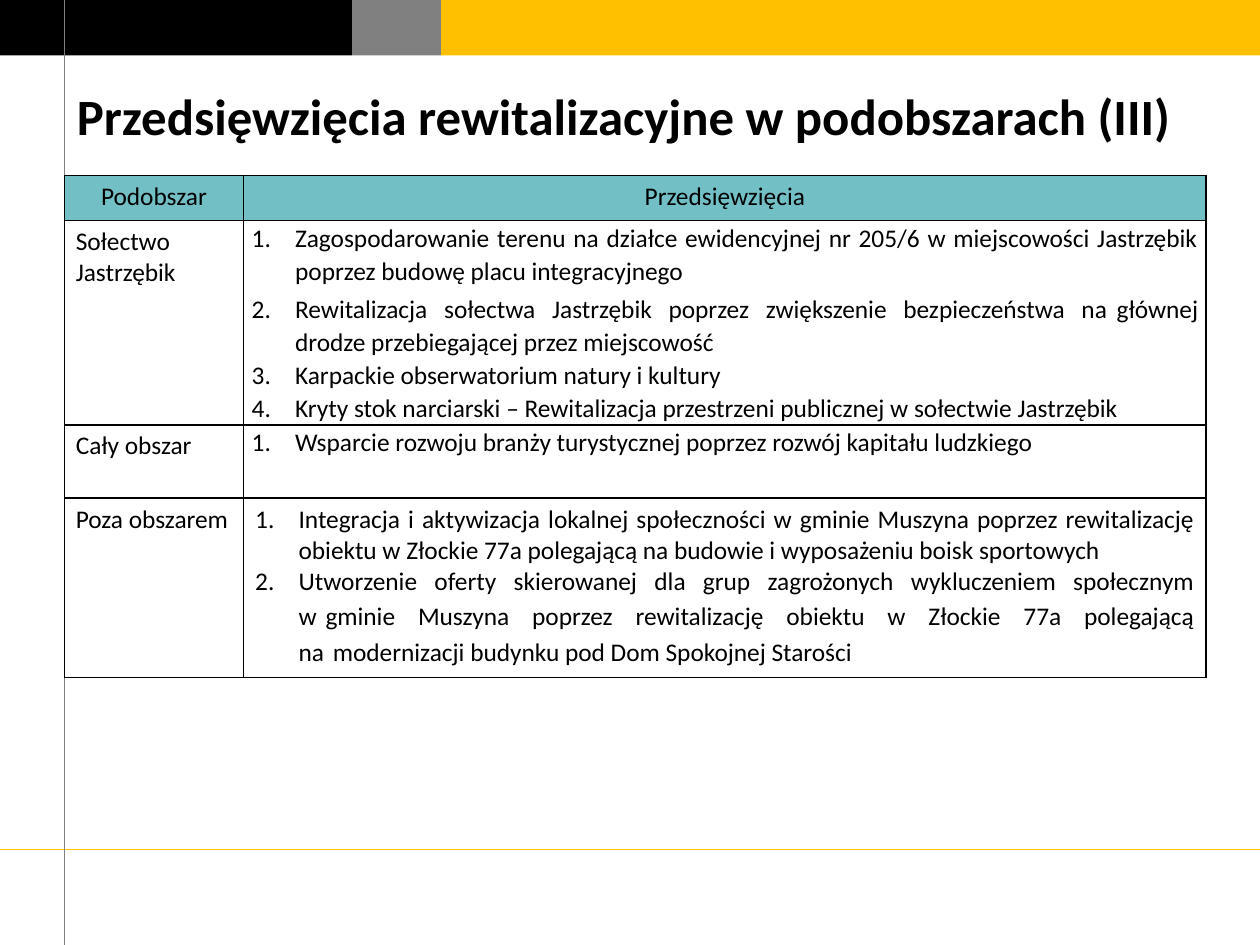
"""Build the slide on revitalisation projects by subarea."""
from dataclasses import dataclass

from lxml.etree import SubElement
from pptx import Presentation
from pptx.dml.color import RGBColor
from pptx.enum.shapes import MSO_CONNECTOR, MSO_SHAPE
from pptx.enum.text import MSO_ANCHOR, PP_ALIGN
from pptx.oxml.ns import qn
from pptx.util import Cm, Inches, Pt


@dataclass(frozen=True)
class Theme:
    black: str = "000000"
    gray: str = "808080"
    amber: str = "FFC000"
    teal: str = "72BFC5"
    text_font: str = "Calibri"
    space_font: str = "Arial"
    title_size: int = 32
    body_size: int = 16
    space_size: int = 20
    hairline: float = 0.75
    border: float = 1
    grid: float = 0.1


@dataclass(frozen=True)
class Project:
    subarea: str
    items: tuple
    tight: bool = False
    anchor: MSO_ANCHOR = MSO_ANCHOR.TOP


HARD_SPACE = chr(160)
COLUMNS, ROWS = 110.24, 82.68
MARGIN, BAND = 5.63, 4.86
HEADINGS = ("Podobszar", "Przedsięwzięcia")
PROJECTS = (
    Project("Sołectwo Jastrzębik", (
        ("Zagospodarowanie terenu na działce ewidencyjnej nr 205/6 w miejscowości "
         "Jastrzębik poprzez budowę placu integracyjnego",),
        ("Rewitalizacja sołectwa Jastrzębik poprzez zwiększenie bezpieczeństwa na",
         "głównej drodze przebiegającej przez miejscowość"),
        ("Karpackie obserwatorium natury i kultury",),
        ("Kryty stok narciarski – Rewitalizacja przestrzeni publicznej "
         "w sołectwie Jastrzębik ",),
    ), True, MSO_ANCHOR.MIDDLE),
    Project("Cały obszar", (
        ("Wsparcie rozwoju branży turystycznej poprzez rozwój kapitału ludzkiego",),
    ), True),
    Project("Poza obszarem", (
        ("Integracja i aktywizacja lokalnej społeczności w gminie Muszyna poprzez "
         "rewitalizację obiektu w Złockie 77a polegającą na budowie i wyposażeniu "
         "boisk sportowych ",),
        ("Utworzenie oferty skierowanej dla grup zagrożonych wykluczeniem społecznym w",
         "gminie Muszyna poprzez rewitalizację obiektu w Złockie 77a polegającą na",
         "modernizacji budynku pod Dom Spokojnej Starości"),
    )),
)


class SlideBuilder:
    def __init__(self, slide, theme):
        self.slide = slide
        self.theme = theme

    def lengths(self, *cells):
        return [Inches(cell * self.theme.grid) for cell in cells]

    def band(self, left, right, color):
        box = self.slide.shapes.add_shape(
            MSO_SHAPE.RECTANGLE, *self.lengths(left, 0, right - left, BAND))
        box.shadow.inherit = False
        box.fill.solid()
        box.fill.fore_color.rgb = RGBColor.from_string(color)
        box.line.fill.background()

    def rule(self, start, end, color):
        line = self.slide.shapes.add_connector(
            MSO_CONNECTOR.STRAIGHT, *self.lengths(*start, *end))
        line.line.color.rgb = RGBColor.from_string(color)
        line.line.width = Pt(self.theme.hairline)
        SubElement(line._element.spPr, qn("a:effectLst"))

    def style(self, span, size, bold=False, font=None):
        span.font.name = font or self.theme.text_font
        span.font.size = Pt(size)
        span.font.bold = bold
        span.font.color.rgb = RGBColor.from_string(self.theme.black)

    def title(self, text, left, top, width, height):
        box = self.slide.shapes.add_textbox(*self.lengths(left, top, width, height))
        frame = box.text_frame
        frame.word_wrap = True
        frame.vertical_anchor = MSO_ANCHOR.MIDDLE
        frame.margin_left = frame.margin_right = Inches(0.11)
        frame.margin_top = frame.margin_bottom = Inches(0.06)
        frame.text = text
        para = frame.paragraphs[0]
        para.alignment = PP_ALIGN.JUSTIFY
        self.style(para.runs[0], self.theme.title_size, bold=True)

    def outline(self, cell):
        properties = cell._tc.get_or_add_tcPr()
        for side in ("lnL", "lnR", "lnT", "lnB"):
            edge = SubElement(properties, qn(f"a:{side}"), w=str(Pt(self.theme.border)))
            fill = SubElement(edge, qn("a:solidFill"))
            SubElement(fill, qn("a:srgbClr"), val=self.theme.black)

    def label(self, cell, text, alignment=PP_ALIGN.LEFT):
        cell.text_frame.text = text
        para = cell.text_frame.paragraphs[0]
        para.alignment = alignment
        self.style(para.runs[0], self.theme.body_size)

    def numbered_list(self, cell, project):
        cell.vertical_anchor = project.anchor
        if project.tight:
            cell.margin_left = cell.margin_right = Inches(0.07)
            cell.margin_top = cell.margin_bottom = 0
        frame = cell.text_frame
        for index, pieces in enumerate(project.items):
            para = frame.add_paragraph() if index else frame.paragraphs[0]
            para.alignment = PP_ALIGN.JUSTIFY
            if project.tight:
                para.line_spacing = 1.07
            properties = para._p.get_or_add_pPr()
            properties.set("marL", str(Inches(0.38)))
            properties.set("indent", str(-Inches(0.38)))
            SubElement(properties, qn("a:buFont"), typeface="+mj-lt")
            SubElement(properties, qn("a:buAutoNum"), type="arabicPeriod")
            for position, piece in enumerate(pieces):
                if position:
                    gap = para.add_run()
                    gap.text = HARD_SPACE
                    self.style(gap, self.theme.space_size, font=self.theme.space_font)
                span = para.add_run()
                span.text = piece
                self.style(span, self.theme.body_size)

    def project_table(self, left, top, widths, heights):
        table = self.slide.shapes.add_table(
            len(heights), len(widths),
            *self.lengths(left, top, sum(widths), sum(heights))).table
        table.first_row = table.horz_banding = False
        for column, width in zip(table.columns, self.lengths(*widths)):
            column.width = width
        for row, height in zip(table.rows, self.lengths(*heights)):
            row.height = height
        for cell in table.iter_cells():
            self.outline(cell)
            cell.fill.background()
        for index, heading in enumerate(HEADINGS):
            cell = table.cell(0, index)
            cell.fill.solid()
            cell.fill.fore_color.rgb = RGBColor.from_string(self.theme.teal)
            self.label(cell, heading, PP_ALIGN.CENTER)
        for index, project in enumerate(PROJECTS, start=1):
            self.label(table.cell(index, 0), project.subarea)
            self.numbered_list(table.cell(index, 1), project)


def main():
    theme = Theme()
    deck = Presentation()
    deck.slide_width = Cm(28)
    deck.slide_height = Cm(21)
    page = SlideBuilder(deck.slides.add_slide(deck.slide_layouts[6]), theme)
    left = 0
    for right, color in ((30.8, theme.black), (38.6, theme.gray), (COLUMNS, theme.amber)):
        page.band(left, right, color)
        left = right
    page.rule((0, 74.3), (COLUMNS, 74.3), theme.amber)
    page.rule((MARGIN, ROWS), (MARGIN, 0), theme.gray)
    page.title("Przedsięwzięcia rewitalizacyjne w podobszarach (III)",
               MARGIN, BAND, 99.2, 10.5)
    page.project_table(MARGIN, 15.34, (15.7, 84.2), (3.95, 17.9, 6.4, 15.7))
    deck.save("out.pptx")


if __name__ == "__main__":
    main()
